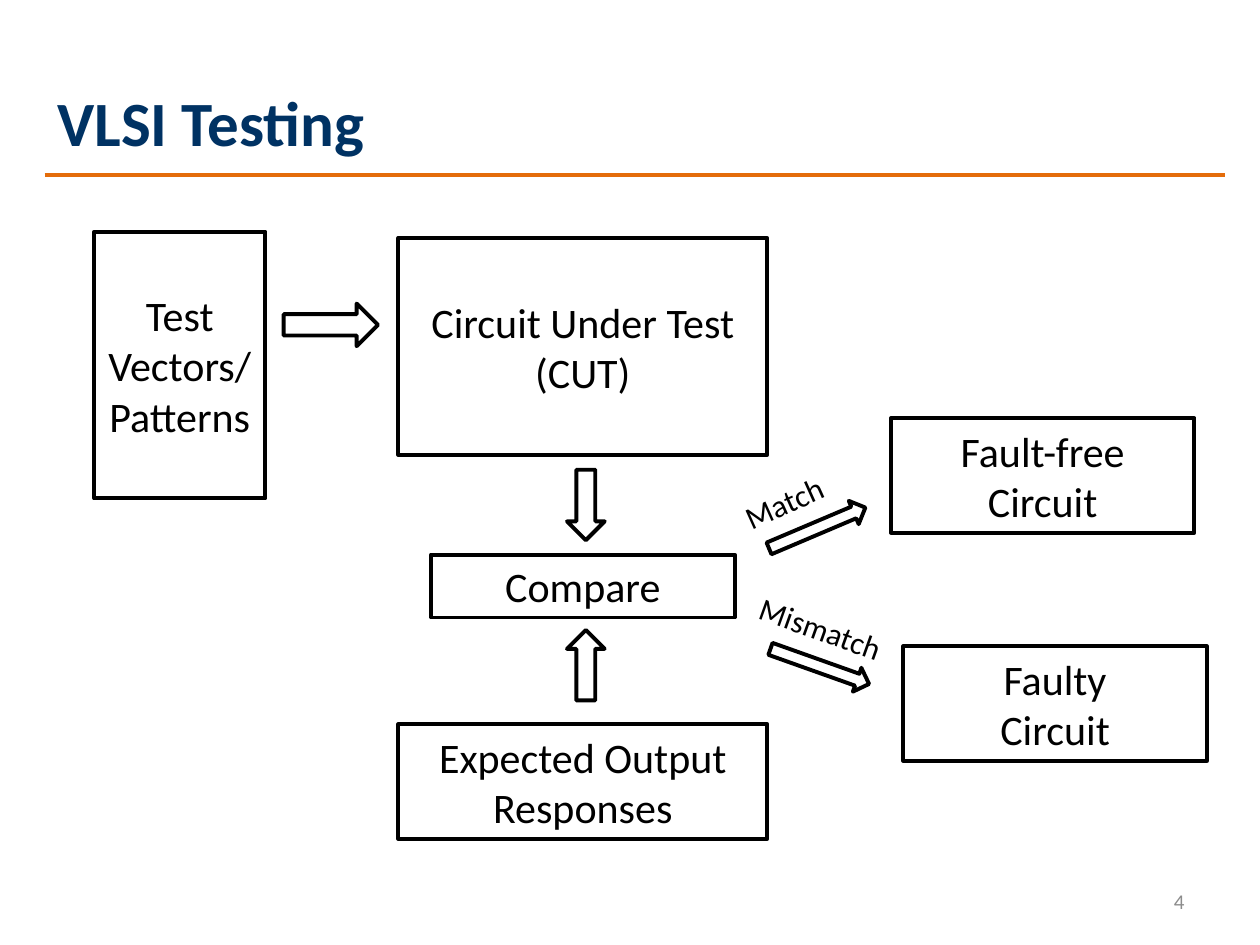
from lxml.etree import SubElement
from pptx import Presentation
from pptx.dml.color import RGBColor
from pptx.enum.shapes import MSO_CONNECTOR, MSO_SHAPE
from pptx.enum.text import MSO_ANCHOR, MSO_AUTO_SIZE, PP_ALIGN
from pptx.oxml.ns import qn
from pptx.util import Cm, Pt

BLACK = "000000"
FONT = "Calibri"
BLOCKS = [
    (0, 0, 3.45, 5.38, ["Test Vectors/", "Patterns"]),
    (6.13, 0.13, 7.44, 4.37, ["Circuit Under Test", "(CUT)"]),
    (6.79, 6.51, 6.12, 1.27, ["Compare"]),
    (6.13, 9.93, 7.44, 2.31, ["Expected Output Responses"]),
    (16.06, 3.76, 6.12, 2.31, ["Fault-free", "Circuit"]),
    (16.31, 8.36, 6.12, 2.31, ["Faulty", "Circuit"]),
]
ARROWS = [
    (3.82, 1.45, 1.9, 0.86, 0),
    (9.2, 5.13, 1.42, 0.76, 90),
    (9.2, 8.36, 1.42, 0.76, 270),
    (13.52, 5.72, 2.11, 0.51, 337),
    (13.57, 8.51, 2.11, 0.51, 19.6),
]
LABELS = [
    (12.81, 4.86, 2.54, 1.02, 335.7, "Match"),
    (13.09, 7.65, 4.06, 1.02, 19.7, "Mismatch"),
]


def rgb(color):
    return RGBColor.from_string(color)


def write(sp, lines, size, color=BLACK, align=PP_ALIGN.LEFT, bold=False):
    tf = sp.text_frame
    tf.word_wrap = True
    tf.auto_size = MSO_AUTO_SIZE.NONE
    tf.vertical_anchor = MSO_ANCHOR.MIDDLE
    for i, line in enumerate(lines):
        p = tf.add_paragraph() if i else tf.paragraphs[0]
        p.alignment = align
        r = p.add_run()
        r.text = line
        r.font.name = FONT
        r.font.size = Pt(size)
        r.font.bold = bold
        r.font.color.rgb = rgb(color)


def add_outlined(s, kind, x, y, w, h):
    sp = s.shapes.add_shape(kind, Cm(x), Cm(y), Cm(w), Cm(h))
    sp.shadow.inherit = False
    sp.fill.background()
    sp.line.color.rgb = rgb(BLACK)
    sp.line.width = Pt(2.25)
    return sp


def add_header(s, x, y, w, h):
    title = s.shapes.title
    title.left, title.top, title.width, title.height = Cm(x), Cm(y), Cm(16.18), Cm(h)
    write(title, ["VLSI Testing"], 36, "003263", bold=True)
    rule_y = Cm(y + h + 0.02)
    rule = s.shapes.add_connector(MSO_CONNECTOR.STRAIGHT, Cm(x), rule_y, Cm(x + w), rule_y)
    rule.line.color.rgb = rgb("E46C0A")
    rule.line.width = Pt(2.25)
    SubElement(rule._element.spPr, qn("a:effectLst"))


def add_diagram(s, left, top):
    for x, y, w, h, lines in BLOCKS:
        sp = add_outlined(s, MSO_SHAPE.RECTANGLE, left + x, top + y, w, h)
        write(sp, lines, 24, align=PP_ALIGN.CENTER)
    for x, y, w, h, angle in ARROWS:
        sp = add_outlined(s, MSO_SHAPE.RIGHT_ARROW, left + x, top + y, w, h)
        sp.rotation = angle
    for x, y, w, h, angle, text in LABELS:
        sp = s.shapes.add_textbox(Cm(left + x), Cm(top + y), Cm(w), Cm(h))
        sp.rotation = angle
        write(sp, [text], 18)


def add_page_number(s, x, y, w, h):
    sp = s.shapes.add_textbox(Cm(x), Cm(y), Cm(w), Cm(h))
    write(sp, ["4"], 12, "8C8C8C", PP_ALIGN.RIGHT)


def main():
    prs = Presentation()
    prs.slide_width, prs.slide_height = Cm(25.4), Cm(19.05)
    s = prs.slides.add_slide(prs.slide_layouts[5])
    add_header(s, 0.9, 1.4, 23.8, 2.11)
    add_diagram(s, 1.9, 4.67)
    add_page_number(s, 18.2, 17.66, 5.93, 1.01)
    prs.save("out.pptx")


if __name__ == "__main__":
    main()
